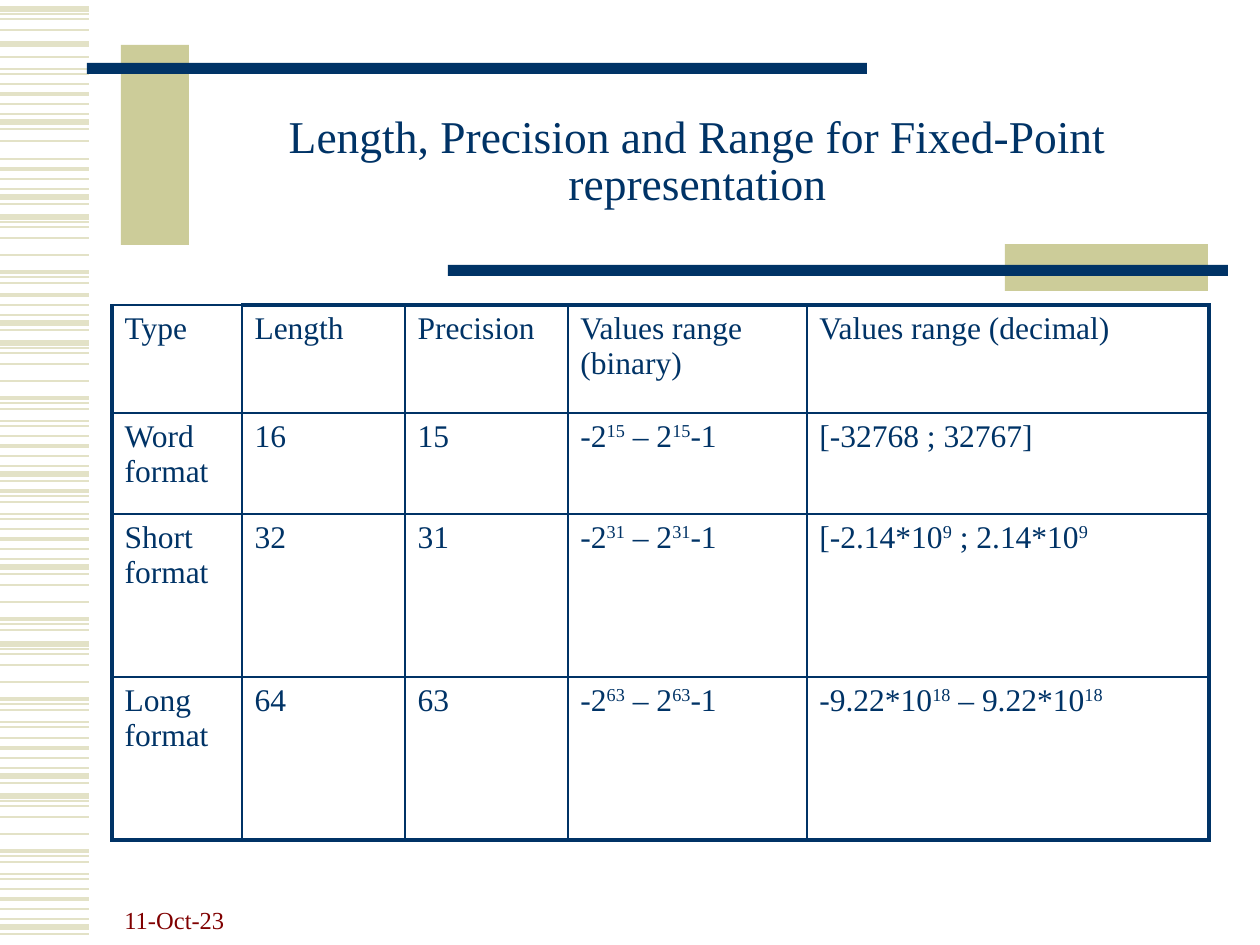
from lxml import etree
from pptx import Presentation
from pptx import util as u
from pptx.dml import color
from pptx.enum import shapes, text
from pptx.oxml import ns

PX = 914400 / 126
NAVY, KHAKI, PALE, MAROON = "003366", "CCCC99", "E3E2C7", "800000"
FONT = "Times New Roman"

CLUSTER = [(-38, 1), (-28, 2.25), (-18, 1.5), (-8, 0.75), (0, 3), (7, 1.5)]
LADDER = [(0, 3), (5, 0.75), (10, 1), (21, 1), (38, 1), (55, 2.25),
          (60, 0.75), (66, 1.5), (78, 0.75), (83, 1.5)]
STRIPES = [
    (9, LADDER[:4]), (44, LADDER[:1]), (-9, LADDER[7:]), (122, CLUSTER),
    (103, LADDER[4:5]), (197, CLUSTER), (217, LADDER[:8]),
    (323, CLUSTER[1:]), (343, LADDER), (474, CLUSTER), (436, LADDER[5:]),
    (567, CLUSTER), (564, LADDER[3:8]), (644, LADDER), (776, CLUSTER),
    (796, LADDER), (927, CLUSTER),
]

COLS = [130, 163, 163, 239, 402]
ROWS = [108, 101, 163, 163]
CELLS = [
    ["Type", "Length", "Precision", "Values range (binary)", "Values range (decimal)"],
    ["Word format", "16", "15", "-2^15^ – 2^15^-1", "[-32768 ; 32767]"],
    ["Short format", "32", "31", "-2^31^ – 2^31^-1", "[-2.14*10^9^ ; 2.14*10^9^"],
    ["Long format", "64", "63", "-2^63^ – 2^63^-1", "-9.22*10^18^ – 9.22*10^18^"],
]


def px(n):
    return u.Emu(round(n * PX))


def rgb(value):
    return color.RGBColor.from_string(value)


def write(tf, content, size=18, fill=NAVY, align=None, spacing=None, before=None):
    tf.word_wrap = True
    p = tf.paragraphs[0]
    p.alignment, p.line_spacing = align, spacing
    if before:
        p.space_before = u.Pt(before)
    for i, part in enumerate(content.split("^")):
        if not part:
            continue
        r = p.add_run()
        r.text = part
        r.font.name, r.font.size = FONT, u.Pt(size)
        r.font.color.rgb = rgb(fill)
        if i % 2:
            r.font._element.set("baseline", "30000")


def add_stripes(s, x, y, w):
    group = s.shapes.add_group_shape()
    for anchor, motif in STRIPES:
        for offset, weight in motif:
            at = px(y + anchor + offset)
            line = group.shapes.add_connector(
                shapes.MSO_CONNECTOR.STRAIGHT, px(x), at, px(x + w), at)
            line.line.color.rgb = rgb(PALE)
            line.line.width = u.Pt(weight)
            etree.SubElement(line._element.spPr, ns.qn("a:effectLst"))


def add_bars(s, x, y):
    bars = [(34, 0, 68, 200, KHAKI), (0, 18, 780, 11, NAVY),
            (918, 199, 203, 47, KHAKI), (361, 220, 780, 11, NAVY)]
    for left, top, w, h, fill in bars:
        sp = s.shapes.add_shape(shapes.MSO_SHAPE.RECTANGLE,
                                px(x + left), px(y + top), px(w), px(h))
        sp.shadow.inherit = False
        sp.fill.solid()
        sp.fill.fore_color.rgb = rgb(fill)
        sp.line.fill.background()


def add_title(s, x, y, w, h):
    sp = s.shapes.title
    sp.left, sp.top, sp.width, sp.height = px(x), px(y), px(w), px(h)
    tf = sp.text_frame
    tf.vertical_anchor = text.MSO_ANCHOR.MIDDLE
    write(tf, "Length, Precision and Range for Fixed-Point representation",
          size=26, align=text.PP_ALIGN.CENTER, spacing=0.85)


def add_date(s, x, y, w, h):
    tf = s.shapes.add_textbox(px(x), px(y), px(w), px(h)).text_frame
    tf.vertical_anchor = text.MSO_ANCHOR.BOTTOM
    write(tf, "11-Oct-23", size=14, fill=MAROON)


def set_borders(cell, **weights):
    tcPr = cell._tc.get_or_add_tcPr()
    for side, weight in weights.items():
        ln = etree.SubElement(tcPr, ns.qn(f"a:ln{side}"), w=str(u.Pt(weight)))
        fill = etree.SubElement(ln, ns.qn("a:solidFill"))
        etree.SubElement(fill, ns.qn("a:srgbClr"), val=NAVY)


def add_format_table(s, x, y):
    table = s.shapes.add_table(len(ROWS), len(COLS), px(x), px(y),
                               px(sum(COLS)), px(sum(ROWS))).table
    table.first_row = table.horz_banding = False
    for col, w in zip(table.columns, COLS):
        col.width = px(w)
    for row, h in zip(table.rows, ROWS):
        row.height = px(h)
    thin, thick = 1, 2.25
    for i, row in enumerate(CELLS):
        for j, content in enumerate(row):
            cell = table.cell(i, j)
            write(cell.text_frame, content, before=3.6)
            set_borders(cell,
                        L=thick if j == 0 else thin,
                        R=thick if j == len(COLS) - 1 else thin,
                        T=thick if i == 0 and j > 0 else thin,
                        B=thick if i == len(ROWS) - 1 else thin)
            cell.fill.background()


def main():
    prs = Presentation()
    prs.slide_width, prs.slide_height = px(1260), px(945)
    s = prs.slides.add_slide(prs.slide_layouts[5])
    add_stripes(s, 0, 0, 89)
    add_bars(s, 87, 45)
    add_date(s, 112, 878, 262, 63)
    add_title(s, 189, 84, 1017, 158)
    add_format_table(s, 112, 305)
    prs.save("out.pptx")


if __name__ == "__main__":
    main()
